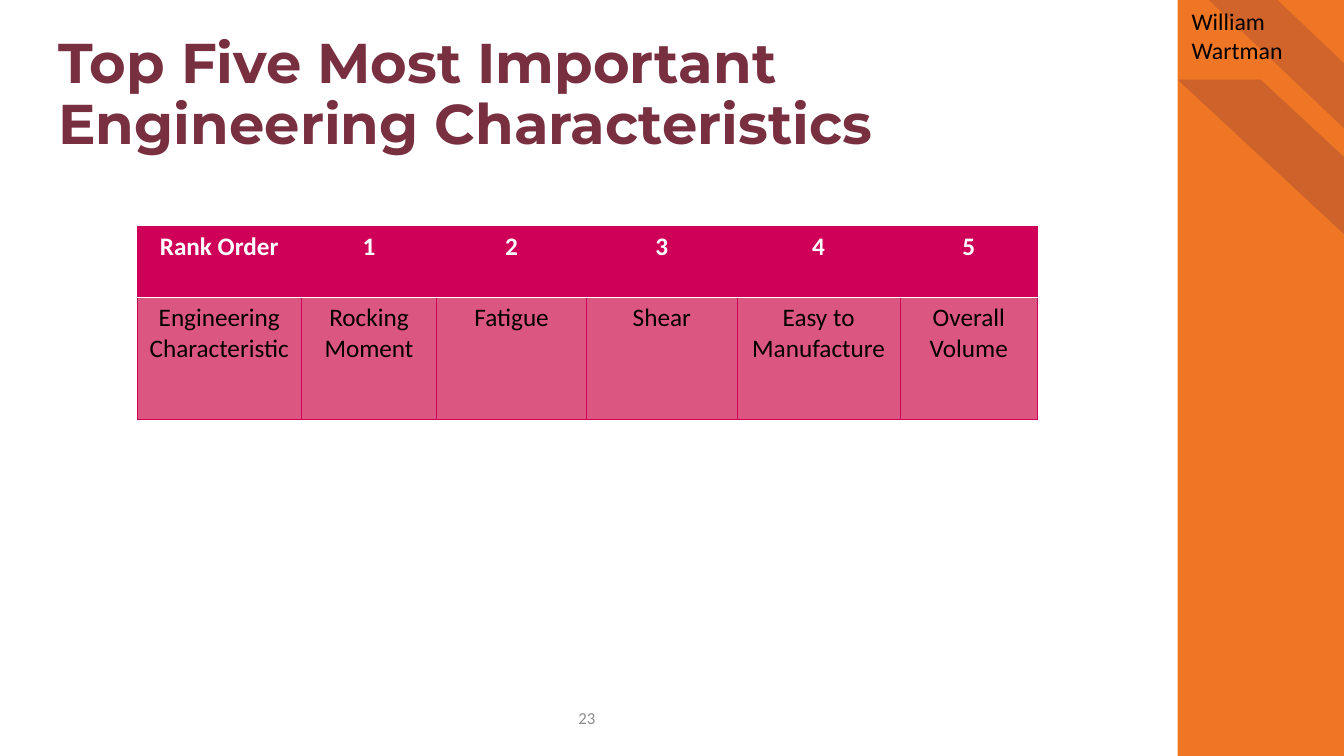
import dataclasses

import pptx
import pptx.dml.color
import pptx.enum.shapes
import pptx.enum.text
import pptx.oxml
import pptx.oxml.ns
import pptx.util

Inches = pptx.util.Inches
Pt = pptx.util.Pt
RGB = pptx.dml.color.RGBColor.from_string
Shape = pptx.enum.shapes.MSO_SHAPE
Align = pptx.enum.text.PP_ALIGN
Anchor = pptx.enum.text.MSO_ANCHOR


@dataclasses.dataclass(frozen=True)
class Theme:
    orange: str = "EE7624"
    garnet: str = "782F40"
    pink: str = "CE0058"
    rose: str = "DC5682"
    white: str = "FFFFFF"
    black: str = "000000"
    gray: str = "8C8C8C"
    head: str = "Montserrat"
    body: str = "Calibri"
    title: int = 40
    cell: int = 18
    name: int = 17
    page: int = 12


THEME = Theme()
WIDTHS = [1.63, 1.34, 1.49, 1.49, 1.62, 1.36]
HEIGHTS = [0.7, 1.21]
ROWS = [
    ["Rank Order", "1", "2", "3", "4", "5"],
    ["Engineering Characteristic", "Rocking Moment", "Fatigue", "Shear",
     "Easy to Manufacture", "Overall Volume"],
]


def write(frame, text, size, color, font=THEME.body, bold=False, align=Align.LEFT):
    para = frame.paragraphs[0]
    para.alignment = align
    run = para.add_run()
    run.text = text
    run.font.size = Pt(size)
    run.font.name = font
    run.font.bold = bold
    run.font.color.rgb = RGB(color)
    return para


def add_text(slide, box, text, size, color, anchor=Anchor.TOP, inset=None, **style):
    frame = slide.shapes.add_textbox(*map(Inches, box)).text_frame
    frame.word_wrap = True
    frame.vertical_anchor = anchor
    if inset is not None:
        frame.margin_left = frame.margin_right = Inches(inset)
        frame.margin_top = frame.margin_bottom = Inches(inset)
    return write(frame, text, size, color, **style)


def add_block(slide, kind, box, color):
    block = slide.shapes.add_shape(kind, *map(Inches, box))
    block.shadow.inherit = False
    block.fill.solid()
    block.fill.fore_color.rgb = RGB(color)
    block.line.fill.background()
    return block


def add_stripe(slide, box, alpha, ratio):
    stripe = add_block(slide, Shape.DIAGONAL_STRIPE, box, THEME.garnet)
    stripe.adjustments[0] = ratio
    props = stripe.element.spPr
    props.find(pptx.oxml.ns.qn("a:xfrm")).set("flipH", "1")
    color = props.find(".//" + pptx.oxml.ns.qn("a:srgbClr"))
    color.append(pptx.oxml.parse_xml(
        f'<a:alpha {pptx.oxml.ns.nsdecls("a")} val="{alpha * 1000}"/>'))


def add_edge(cell, side, color, width):
    cell._tc.get_or_add_tcPr().append(pptx.oxml.parse_xml(
        f'<a:ln{side} {pptx.oxml.ns.nsdecls("a")} w="{Pt(width)}">'
        f'<a:solidFill><a:srgbClr val="{color}"/></a:solidFill></a:ln{side}>'))


def add_ranks(slide):
    grid = slide.shapes.add_table(
        len(ROWS), len(WIDTHS), Inches(1.36), Inches(2.25),
        Inches(sum(WIDTHS)), Inches(sum(HEIGHTS))).table
    grid.horz_banding = False
    for col, width in zip(grid.columns, WIDTHS):
        col.width = Inches(width)
    for row, height in zip(grid.rows, HEIGHTS):
        row.height = Inches(height)
    for r, texts in enumerate(ROWS):
        top = r == 0
        split = "B" if top else "T"
        for c, text in enumerate(texts):
            cell = grid.cell(r, c)
            for side in "LRTB":
                edge = (THEME.white, 1) if side == split else (THEME.pink, 0.5)
                add_edge(cell, side, *edge)
            cell.fill.solid()
            cell.fill.fore_color.rgb = RGB(THEME.pink if top else THEME.rose)
            write(cell.text_frame, text, THEME.cell,
                  THEME.white if top else THEME.black, bold=top, align=Align.CENTER)


def main():
    deck = pptx.Presentation()
    deck.slide_width = Inches(13.33)
    deck.slide_height = Inches(7.5)
    slide = deck.slides.add_slide(deck.slide_layouts[6])
    add_block(slide, Shape.RECTANGLE, (11.68, 0, 1.66, 7.51), THEME.orange)
    add_stripe(slide, (11.68, 0.79, 1.68, 1.56), 28, 0.51)
    add_stripe(slide, (11.99, 0, 1.36, 1.29), 25, 0.5)
    add_text(slide, (5.42, 6.97, 0.8, 0.3), "23", THEME.page, THEME.gray,
             anchor=Anchor.MIDDLE, align=Align.CENTER)
    title = add_text(slide, (0.58, 0.5, 10.5, 1.05),
                     "Top Five Most Important Engineering Characteristics",
                     THEME.title, THEME.garnet, anchor=Anchor.BOTTOM, inset=0,
                     font=THEME.head, bold=True)
    title.line_spacing = 0.9
    add_ranks(slide)
    add_text(slide, (11.72, 0.02, 1.57, 0.96), "William Wartman", THEME.name, THEME.black)
    deck.save("out.pptx")


if __name__ == "__main__":
    main()
